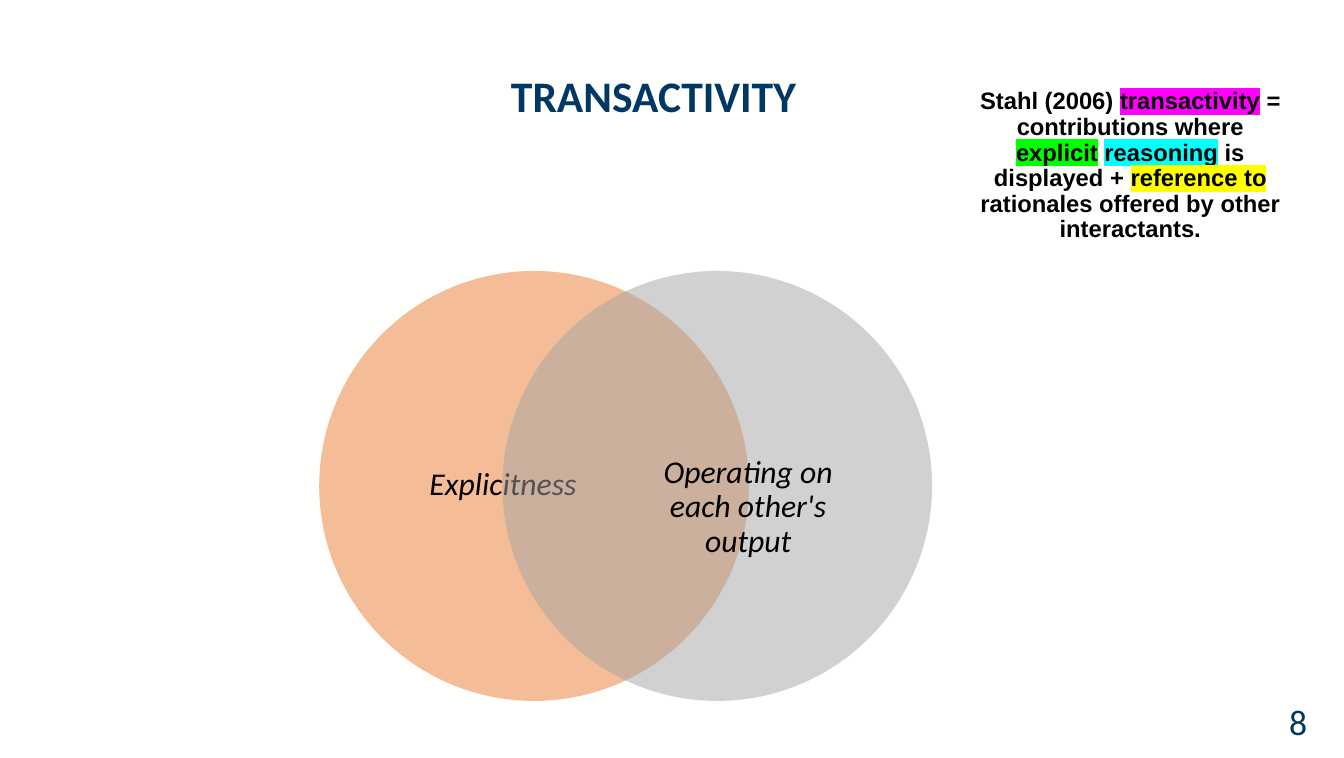
import pptx
import pptx.util
from lxml import etree
from pptx.dml.color import RGBColor
from pptx.enum.shapes import MSO_SHAPE
from pptx.enum.text import MSO_ANCHOR, MSO_AUTO_SIZE, PP_ALIGN
from pptx.oxml.ns import qn

PX = 9144  # 100 px to the inch
NAVY = RGBColor(0x00, 0x38, 0x65)
BLACK = RGBColor(0x00, 0x00, 0x00)
PAPER = RGBColor(0xFF, 0xFF, 0xFE)
ORANGE = RGBColor(0xED, 0x7D, 0x31)
GREY = RGBColor(0xA5, 0xA5, 0xA5)
MAGENTA = RGBColor(0xFF, 0x00, 0xFF)
GREEN = RGBColor(0x00, 0xFF, 0x00)
CYAN = RGBColor(0x00, 0xFF, 0xFF)
YELLOW = RGBColor(0xFF, 0xFF, 0x00)

DEFINITION = [
    ("Stahl (2006) ", None),
    ("transactivity", MAGENTA),
    (" = contributions where ", None),
    ("explicit", GREEN),
    (" ", None),
    ("reasoning", CYAN),
    (" is displayed + ", None),
    ("reference to ", YELLOW),
    ("rationales offered by other interactants.", None),
]


def emu(*lengths):
    return [pptx.util.Emu(n * PX) for n in lengths]


def style(r, size, color, name="Calibri", bold=False, italic=False):
    r.font.size = pptx.util.Pt(size)
    r.font.bold = bold
    r.font.italic = italic
    r.font.color.rgb = color
    r.font.name = name


def highlight(r, color):
    """Marks a run that already has its font set."""
    mark = etree.Element(qn("a:highlight"))
    etree.SubElement(mark, qn("a:srgbClr")).set("val", str(color))
    r.font._element.find(qn("a:latin")).addprevious(mark)


def add_centred_box(shapes, box, inset_x=0, inset_y=0):
    tf = shapes.add_textbox(*emu(*box)).text_frame
    tf.word_wrap = True
    tf.vertical_anchor = MSO_ANCHOR.MIDDLE
    tf.margin_left, tf.margin_right = emu(inset_x, inset_x)
    tf.margin_top, tf.margin_bottom = emu(inset_y, inset_y)
    p = tf.paragraphs[0]
    p.alignment = PP_ALIGN.CENTER
    p.line_spacing = 0.9
    return p


def add_title(s, box):
    sp = s.shapes.title
    sp.left, sp.top, sp.width, sp.height = emu(*box)
    tf = sp.text_frame
    tf.text = "TRANSACTIVITY"
    tf.word_wrap = False
    tf.auto_size = MSO_AUTO_SIZE.NONE
    tf.vertical_anchor = MSO_ANCHOR.MIDDLE
    p = tf.paragraphs[0]
    p.alignment = PP_ALIGN.LEFT
    style(p.runs[0], 44, NAVY, bold=True)


def add_venn(s, box):
    """Two overlapping half-transparent circles, each with its label."""
    left, top, width, height = box
    label_top, label_width, label_height = top + 138, 246, 326
    sets = [
        ("Explicitness", ORANGE, left, left + 135, 0),
        ("Operating on each other's output", GREY,
         left + width - height, left + 479, 31),
    ]
    group = s.shapes.add_group_shape()
    for label, color, circle_left, label_left, drop in sets:
        sp = group.shapes.add_shape(
            MSO_SHAPE.OVAL, *emu(circle_left, top, height, height))
        sp.shadow.inherit = False
        sp.line.fill.background()
        sp.fill.solid()
        sp.fill.fore_color.rgb = color
        rgb = sp._element.spPr.find(qn("a:solidFill")).find(qn("a:srgbClr"))
        etree.SubElement(rgb, qn("a:alpha")).set("val", "50000")
        p = add_centred_box(
            group.shapes,
            (label_left, label_top + drop, label_width, label_height))
        p.text = label
        style(p.runs[0], 32, BLACK, italic=True)


def add_definition(s, box):
    p = add_centred_box(s.shapes, box, 19, 3)
    for text, color in DEFINITION:
        r = p.add_run()
        r.text = text
        style(r, 24, BLACK, "Arial", bold=True)
        if color is not None:
            highlight(r, color)


def add_page_number(s, box):
    tf = s.shapes.add_textbox(*emu(*box)).text_frame
    tf.text = "8"
    tf.word_wrap = True
    tf.vertical_anchor = MSO_ANCHOR.MIDDLE
    style(tf.paragraphs[0].runs[0], 36, NAVY)


def main():
    prs = pptx.Presentation()
    prs.slide_width, prs.slide_height = emu(1886, 1063)
    s = prs.slides.add_slide(prs.slide_layouts.get_by_name("Title Only"))
    s.background.fill.solid()
    s.background.fill.fore_color.rgb = PAPER
    add_page_number(s, (1799, 984, 87, 56))
    add_venn(s, (448, 380, 860, 603))
    add_title(s, (707, 92, 424, 84))
    add_definition(s, (1347, 58, 478, 350))
    prs.save("out.pptx")


if __name__ == "__main__":
    main()
